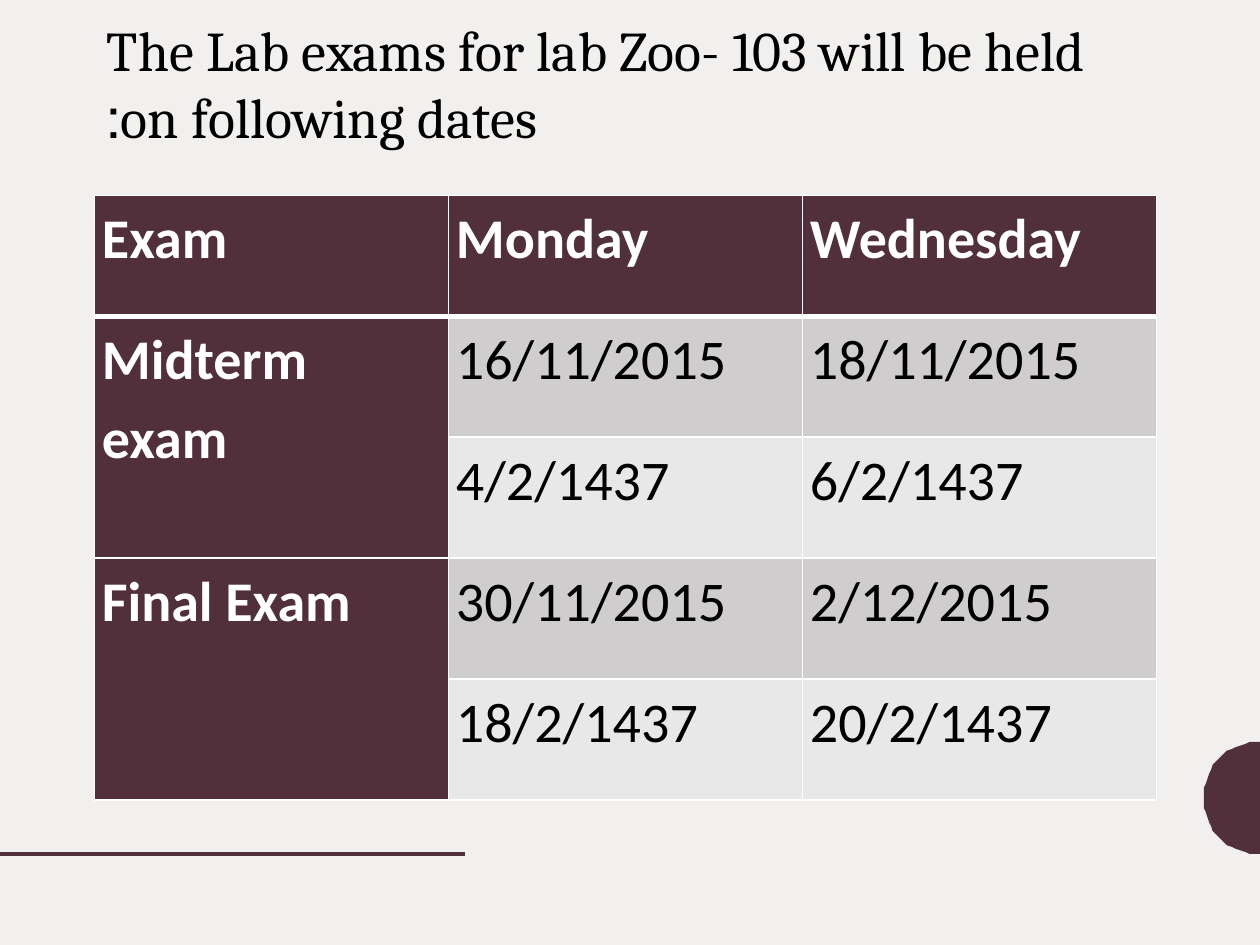
import math
from lxml import etree
from pptx import Presentation
from pptx.dml.color import RGBColor
from pptx.enum import shapes, text
from pptx.oxml import ns
from pptx.util import Pt

PLUM = RGBColor(0x51, 0x30, 0x3B)
PAPER = RGBColor(0xF2, 0xF0, 0xEF)
DARK_BAND = RGBColor(0xD0, 0xCD, 0xCE)
LIGHT_BAND = RGBColor(0xE9, 0xE8, 0xE8)
WHITE = RGBColor(0xFF, 0xFF, 0xFF)
BLACK = RGBColor(0, 0, 0)


def write(paragraph, words, color, **font):
    span = paragraph.add_run()
    span.text = words
    span.font.color.rgb = color
    for name, value in font.items():
        setattr(span.font, name, value)


def add_border(cell, position, side, width):
    line = etree.Element(ns.qn(f"a:ln{side}"), w=str(Pt(width)))
    fill = etree.SubElement(line, ns.qn("a:solidFill"))
    etree.SubElement(fill, ns.qn("a:srgbClr"), val=str(WHITE))
    cell._tc.get_or_add_tcPr().insert(position, line)


deck = Presentation()
deck.slide_width, deck.slide_height = Pt(720), Pt(540)
page = deck.slides.add_slide(deck.slide_layouts[6])
page.background.fill.solid()
page.background.fill.fore_color.rgb = PAPER

# Half disc on the right edge
center_x, center_y, radius = 720, 456, 32.4
angles = [math.radians(degree) for degree in range(90, 271, 5)]
points = [(center_x + radius * math.cos(a), center_y + radius * math.sin(a)) for a in angles]
builder = page.shapes.build_freeform(*points[0], scale=Pt(1))
builder.add_line_segments(points[1:], close=True)
disc = builder.convert_to_shape()
disc.shadow.inherit = False
disc.fill.solid()
disc.fill.fore_color.rgb = PLUM
disc.line.fill.background()

# Rule at the lower left
rule = page.shapes.add_connector(shapes.MSO_CONNECTOR.STRAIGHT, Pt(0), Pt(488), Pt(265.7), Pt(488))
rule.line.color.rgb = PLUM
rule.line.width = Pt(2)
etree.SubElement(rule._element.spPr, ns.qn("a:effectLst"))

# Exam dates
rows = [
    ["Exam", "Monday", "Wednesday"],
    ["Midterm exam", "16/11/2015", "18/11/2015"],
    ["", "4/2/1437", "6/2/1437"],
    ["Final Exam", "30/11/2015", "2/12/2015"],
    ["", "18/2/1437", "20/2/1437"],
]
table = page.shapes.add_table(5, 3, Pt(54), Pt(111.6), Pt(607), Pt(345.6)).table
for column in table.columns:
    column.width = Pt(202.3)
for row in table.rows:
    row.height = Pt(69.12)

cell_format = {"margin_left": Pt(4.3), "margin_right": Pt(4.3), "margin_top": 0, "margin_bottom": 0,
               "vertical_anchor": text.MSO_ANCHOR.TOP}
for r, row in enumerate(rows):
    for c, words in enumerate(row):
        cell = table.cell(r, c)
        for name, value in cell_format.items():
            setattr(cell, name, value)
        heading = r == 0 or c == 0
        cell.fill.solid()
        cell.fill.fore_color.rgb = PLUM if heading else DARK_BAND if r % 2 else LIGHT_BAND
        widths = {"L": 1, "R": 1, "T": 3 if r == 1 else 1, "B": 3 if r == 0 else 1}
        for position, (side, width) in enumerate(widths.items()):
            add_border(cell, position, side, width)
        if words:
            para = cell.text_frame.paragraphs[0]
            para.alignment = text.PP_ALIGN.LEFT
            para.line_spacing = 1.15
            write(para, words, WHITE if heading else BLACK, name="Calibri", size=Pt(32), bold=heading)
for first in (1, 3):
    table.cell(first, 0).merge(table.cell(first + 1, 0))

# Title, set right to left
box = page.shapes.add_textbox(Pt(54), Pt(2.9), Pt(607), Pt(128))
frame_format = {"word_wrap": True, "margin_top": Pt(6), "vertical_anchor": text.MSO_ANCHOR.TOP}
for name, value in frame_format.items():
    setattr(box.text_frame, name, value)
para = box.text_frame.paragraphs[0]
para.alignment = text.PP_ALIGN.LEFT
para._p.get_or_add_pPr().set("rtl", "1")
write(para, "The Lab exams for lab Zoo- 103 will be held on following dates:", BLACK,
      name="Cambria", size=Pt(32))

deck.save("out.pptx")
